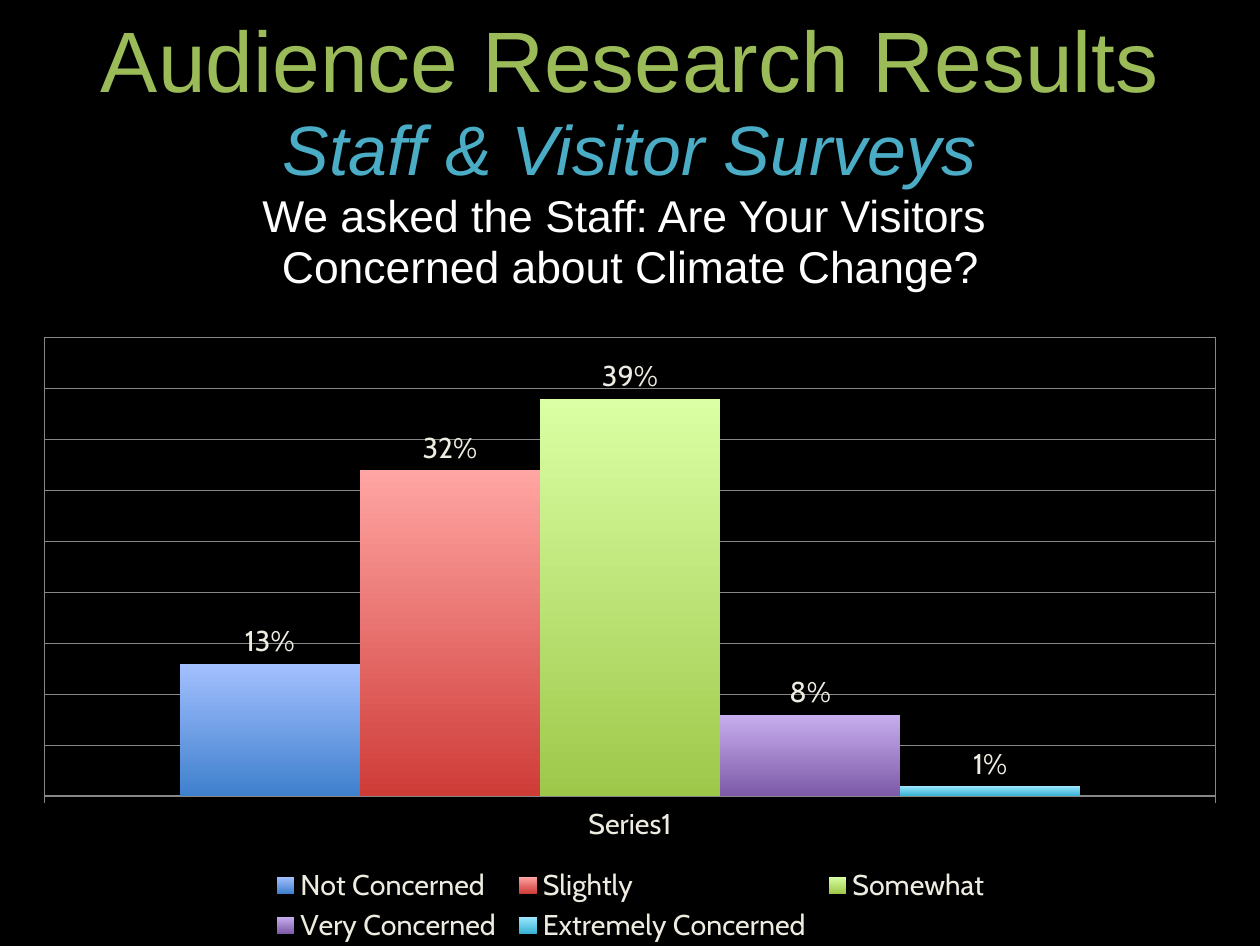
from lxml.etree import SubElement
from pptx import Presentation
from pptx.chart.data import CategoryChartData
from pptx.dml.color import RGBColor
from pptx.enum.chart import XL_CHART_TYPE, XL_LABEL_POSITION, XL_LEGEND_POSITION, XL_TICK_MARK
from pptx.enum.text import MSO_ANCHOR, PP_ALIGN
from pptx.oxml.ns import qn
from pptx.util import Emu, Pt

EMU_PER_PX = 9144
COLORS = {
    "background": "000000",
    "title": "9BBB59",
    "subtitle": "4BACC6",
    "question": "FFFFFF",
    "chart_text": "EEECE1",
    "grid": "878787",
}
HEADING = [
    ("Audience Research Results", 54, "title", False),
    ("Staff & Visitor Surveys", 44, "subtitle", True),
    ("We asked the Staff: Are Your Visitors ", 28, "question", False),
    ("Concerned about Climate Change?", 28, "question", False),
]
ANSWERS = [
    ("Not Concerned", 0.13, "3F80CD", "A3C0FF"),
    ("Slightly", 0.32, "CF3C38", "FFA5A3"),
    ("Somewhat", 0.39, "9EC84A", "DAFFA4"),
    ("Very Concerned", 0.08, "7D5AA8", "C7AEEE"),
    ("Extremely Concerned", 0.01, "36B1D2", "9EE8FF"),
]
SLIDE_SIZE = (1102, 827)
HEADING_BOX = (0, 11, 1102, 247)
CHART_BOX = (18, 284, 1067, 545)
PLOT_BOX = (39, 295, 1024, 401)
LEGEND_BOX = (230, 754, 643, 75)


def px(length):
    return Emu(length * EMU_PER_PX)


def rgb(name):
    return RGBColor.from_string(COLORS[name])


def add_heading(slide):
    frame = slide.shapes.add_textbox(*map(px, HEADING_BOX)).text_frame
    frame.word_wrap = True
    frame.vertical_anchor = MSO_ANCHOR.MIDDLE
    frame.margin_left = frame.margin_right = frame.margin_top = frame.margin_bottom = 0
    for index, (text, size, color, italic) in enumerate(HEADING):
        paragraph = frame.add_paragraph() if index else frame.paragraphs[0]
        paragraph.text = text
        paragraph.alignment = PP_ALIGN.CENTER
        paragraph.line_spacing = 0.95
        paragraph.font.name = "Arial"
        paragraph.font.size = Pt(size)
        paragraph.font.italic = italic
        paragraph.font.color.rgb = rgb(color)


def make_layout(parent, position, box, inner=False):
    for old_layout in parent.findall(qn("c:layout")):
        parent.remove(old_layout)
    layout = SubElement(parent, qn("c:layout"))
    parent.insert(position, layout)
    manual = SubElement(layout, qn("c:manualLayout"))
    left, top, width, height = CHART_BOX
    values = {
        "xMode": "edge",
        "yMode": "edge",
        "x": round((box[0] - left) / width, 4),
        "y": round((box[1] - top) / height, 4),
        "w": round(box[2] / width, 4),
        "h": round(box[3] / height, 4),
    }
    if inner:
        values = {"layoutTarget": "inner", **values}
    for tag, value in values.items():
        SubElement(manual, qn(f"c:{tag}")).set("val", str(value))


def style_line(line):
    line.color.rgb = rgb("grid")
    line.width = Pt(0.75)


def style_axes(chart):
    value_axis = chart.value_axis
    value_axis.minimum_scale = 0
    value_axis.maximum_scale = 0.45
    value_axis.major_unit = 0.05
    value_axis.visible = False
    category_axis = chart.category_axis
    category_axis.major_tick_mark = XL_TICK_MARK.OUTSIDE
    style_line(category_axis.format.line)
    for axis in (value_axis, category_axis):
        axis.has_major_gridlines = True
        style_line(axis.major_gridlines.format.line)


def style_series(series, bottom, top):
    fill = series.format.fill
    fill.gradient()
    fill.gradient_angle = 90
    for stop, color in zip(fill.gradient_stops, (bottom, top)):
        stop.color.rgb = RGBColor.from_string(color)
    series.format.line.fill.background()
    labels = series.data_labels
    labels.show_value = True
    labels.number_format = "0%"
    labels.number_format_is_linked = False
    labels.position = XL_LABEL_POSITION.OUTSIDE_END


def add_answer_chart(slide):
    data = CategoryChartData(number_format="0%")
    data.categories = ["Series1"]
    for name, share, bottom, top in ANSWERS:
        data.add_series(name, [share])
    chart = slide.shapes.add_chart(
        XL_CHART_TYPE.COLUMN_CLUSTERED, *map(px, CHART_BOX), data
    ).chart
    chart.has_title = False
    chart.font.name = "Cabin"
    chart.font.size = Pt(18)
    chart.font.color.rgb = rgb("chart_text")
    chart.has_legend = True
    chart.legend.position = XL_LEGEND_POSITION.BOTTOM
    chart.legend.include_in_layout = False
    plot = chart.plots[0]
    plot.gap_width = 150
    plot.overlap = 0
    plot.vary_by_categories = False
    style_axes(chart)
    for series, (name, share, bottom, top) in zip(plot.series, ANSWERS):
        style_series(series, bottom, top)
    make_layout(plot._element.getparent(), 0, PLOT_BOX, inner=True)
    make_layout(chart.legend._element, 1, LEGEND_BOX)


def main():
    presentation = Presentation()
    presentation.slide_width, presentation.slide_height = map(px, SLIDE_SIZE)
    slide = presentation.slides.add_slide(presentation.slide_layouts[6])
    slide.background.fill.solid()
    slide.background.fill.fore_color.rgb = rgb("background")
    add_heading(slide)
    add_answer_chart(slide)
    presentation.save("out.pptx")


if __name__ == "__main__":
    main()
